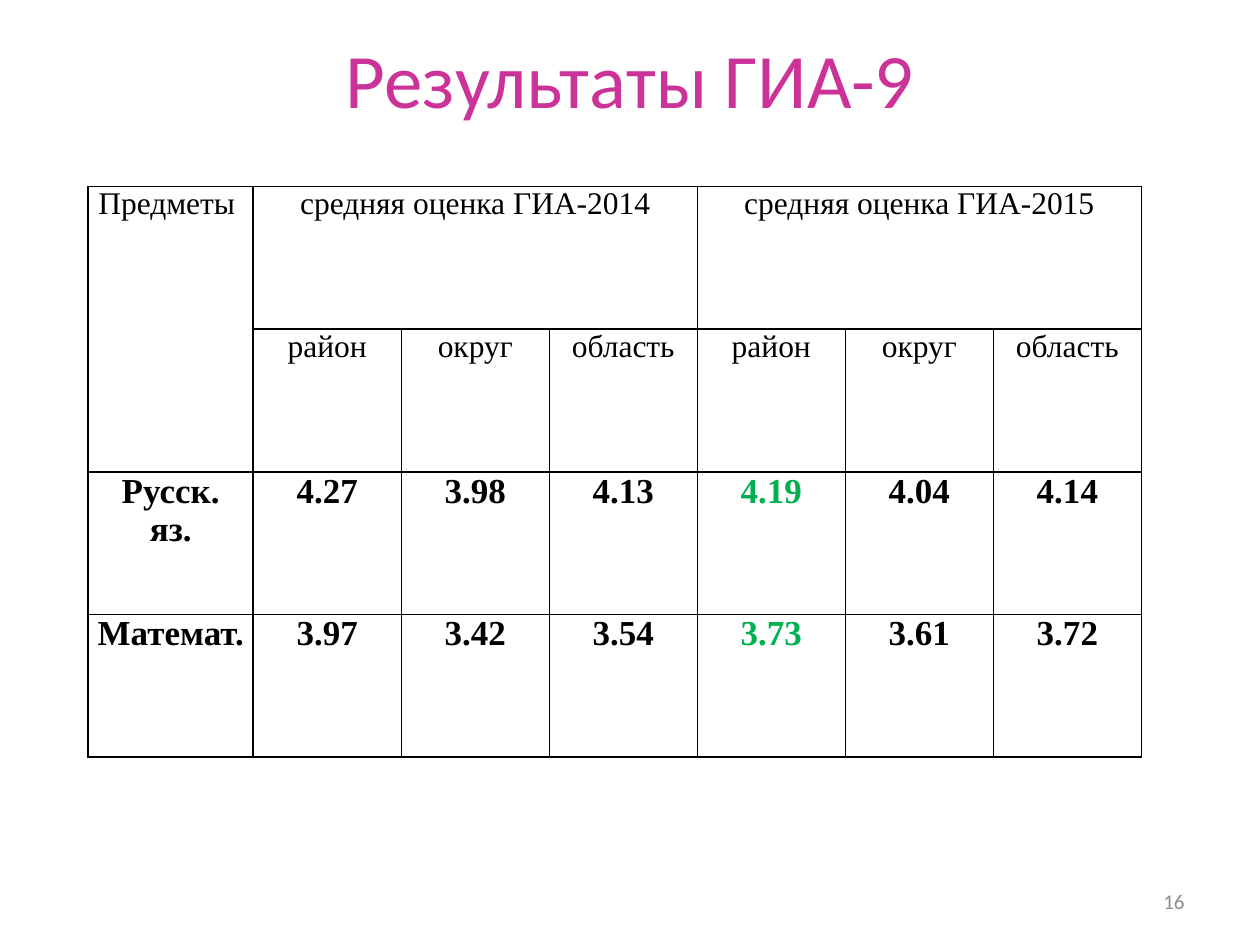
from lxml import etree
from pptx import Presentation
from pptx import util as u
from pptx.dml.color import RGBColor
from pptx.enum import text
from pptx.oxml import ns

COLORS = {"title": "CC3399", "number": "8C8C8C", "ink": "000000", "better": "00B050"}
BODY_FONT = "Times New Roman"
REGIONS = ["район", "округ", "область"]
YEARS = [2014, 2015]
RESULTS = [
    ["Русск. яз.", "4.27", "3.98", "4.13", "4.19", "4.04", "4.14"],
    ["Математ. ", "3.97", "3.42", "3.54", "3.73", "3.61", "3.72"],
]
BETTER_COLUMN = 4


def write_text(frame, content, *, size, color="ink", font="Calibri", bold=False,
               align=text.PP_ALIGN.CENTER):
    frame.word_wrap = True
    paragraph = frame.paragraphs[0]
    paragraph.alignment = align
    run = paragraph.add_run()
    run.text = content
    run.font.name = font
    run.font.size = u.Pt(size)
    run.font.bold = bold
    run.font.color.rgb = RGBColor.from_string(COLORS[color])


def add_text(slide, box, content, **style):
    shape = slide.shapes.add_textbox(*map(u.Inches, box))
    shape.text_frame.vertical_anchor = text.MSO_ANCHOR.MIDDLE
    write_text(shape.text_frame, content, **style)


def format_cell(cell):
    cell.margin_left = cell.margin_right = u.Inches(0.07)
    cell.margin_top = cell.margin_bottom = 0
    properties = cell._tc.get_or_add_tcPr()
    for side in ("lnL", "lnR", "lnT", "lnB"):
        line = etree.SubElement(properties, ns.qn(f"a:{side}"), w=str(u.Pt(1)))
        fill = etree.SubElement(line, ns.qn("a:solidFill"))
        etree.SubElement(fill, ns.qn("a:srgbClr"), val=COLORS["ink"])
    cell.fill.background()


def add_results_table(slide, box):
    left, top, width, height = box
    row_count, column_count = 2 + len(RESULTS), 1 + len(YEARS) * len(REGIONS)
    table = slide.shapes.add_table(row_count, column_count, *map(u.Inches, box)).table
    table.first_row = table.horz_banding = False
    subject_width = 1.31
    for index, column in enumerate(table.columns):
        column.width = u.Inches(
            (width - subject_width) / (column_count - 1) if index else subject_width)
    for row in table.rows:
        row.height = u.Inches(height / row_count)
    for cell in table.iter_cells():
        format_cell(cell)

    header = {"size": 18, "font": BODY_FONT}
    table.cell(0, 0).merge(table.cell(1, 0))
    write_text(table.cell(0, 0).text_frame, "Предметы ", **header)
    for group, year in enumerate(YEARS):
        first = 1 + group * len(REGIONS)
        table.cell(0, first).merge(table.cell(0, first + len(REGIONS) - 1))
        write_text(table.cell(0, first).text_frame, f"средняя оценка ГИА-{year}", **header)
        for offset, region in enumerate(REGIONS):
            write_text(table.cell(1, first + offset).text_frame, region, **header)

    for row_index, values in enumerate(RESULTS, start=2):
        for column_index, value in enumerate(values):
            color = "better" if column_index == BETTER_COLUMN else "ink"
            write_text(table.cell(row_index, column_index).text_frame, value,
                       size=20, font=BODY_FONT, bold=True, color=color)


def main():
    presentation = Presentation()
    presentation.slide_width, presentation.slide_height = u.Inches(10), u.Inches(7.5)
    slide = presentation.slides.add_slide(presentation.slide_layouts[6])
    add_text(slide, (0.5, 0.3, 9, 0.64), "Результаты ГИА-9", size=44, color="title")
    add_results_table(slide, (0.7, 1.48, 8.36, 4.53))
    add_text(slide, (7.17, 6.95, 2.33, 0.4), "16", size=12, color="number",
             align=text.PP_ALIGN.RIGHT)
    presentation.save("out.pptx")


if __name__ == "__main__":
    main()
